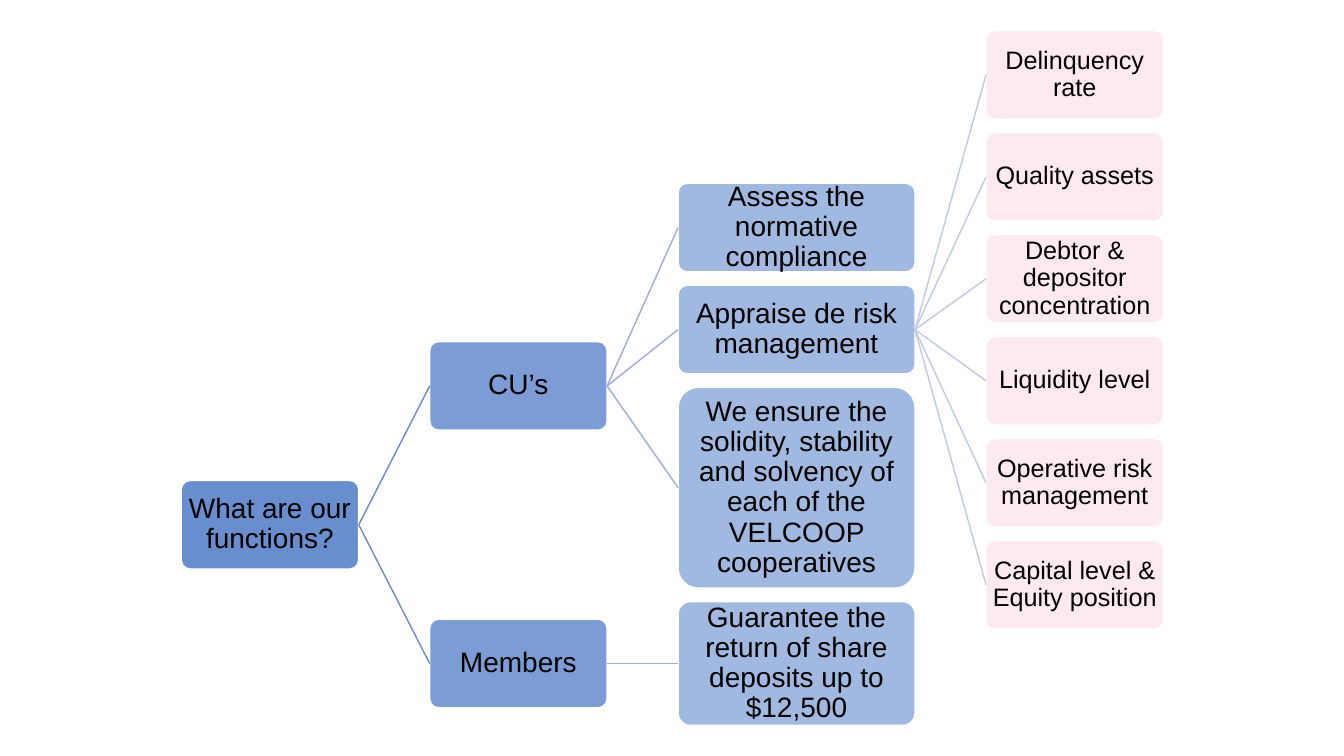
from dataclasses import dataclass, field

from lxml.etree import SubElement
from pptx import Presentation
from pptx.dml.color import RGBColor
from pptx.enum.shapes import MSO_CONNECTOR, MSO_SHAPE
from pptx.enum.text import MSO_ANCHOR, PP_ALIGN
from pptx.oxml.ns import qn
from pptx.shapes.autoshape import Shape
from pptx.shapes.shapetree import SlideShapes
from pptx.util import Cm, Pt

BLUE = RGBColor(0x44, 0x72, 0xC4)
PINK = RGBColor(0xF8, 0xBB, 0xD0)
WHITE = RGBColor(0xFF, 0xFF, 0xFF)
BLACK = RGBColor(0x00, 0x00, 0x00)
GROUP_LINK = RGBColor(0x6D, 0x89, 0xCB)
ACTION_LINK = RGBColor(0x9E, 0xAD, 0xD8)
METRIC_LINK = RGBColor(0xC1, 0xC9, 0xE4)

BOX_HEIGHT = 2.23
ROW_GAP = 0.34
COLUMN_GAP = 1.79
NARROW, WIDE = 4.47, 5.97
RIGHT_SITE, LEFT_SITE = 3, 1


@dataclass(frozen=True)
class Level:
    left: float
    width: float
    fill: RGBColor
    opacity: int
    link: RGBColor
    font_size: int = 20


@dataclass
class Node:
    text: str
    level: Level
    top: float
    height: float = BOX_HEIGHT
    children: list["Node"] = field(default_factory=list)


ROOT_LEFT = 4.57
GROUP_LEFT = ROOT_LEFT + NARROW + COLUMN_GAP
ACTION_LEFT = GROUP_LEFT + NARROW + COLUMN_GAP
METRIC_LEFT = ACTION_LEFT + WIDE + COLUMN_GAP

ROOT = Level(ROOT_LEFT, NARROW, BLUE, 80, GROUP_LINK)
GROUP = Level(GROUP_LEFT, NARROW, BLUE, 70, GROUP_LINK)
ACTION = Level(ACTION_LEFT, WIDE, BLUE, 50, ACTION_LINK)
METRIC = Level(METRIC_LEFT, NARROW, PINK, 30, METRIC_LINK, 18)


def stack(level: Level, top: float, boxes: list[tuple[str, float]]) -> list[Node]:
    """Place boxes of the given heights below each other with equal gaps."""
    nodes = []
    for text, height in boxes:
        nodes.append(Node(text, level, top, height))
        top += height + ROW_GAP
    return nodes


def build_tree() -> Node:
    metrics = stack(METRIC, 0.77, [(text, BOX_HEIGHT) for text in (
        "Delinquency rate",
        "Quality assets",
        "Debtor & depositor concentration",
        "Liquidity level",
        "Operative risk management",
        "Capital level & Equity position",
    )])
    actions = stack(ACTION, 4.62, [
        ("Assess the normative compliance", BOX_HEIGHT),
        ("Appraise de risk management", BOX_HEIGHT),
        ("We ensure the solidity, stability and solvency of each of the "
         "VELCOOP cooperatives", 5.06),
        ("Guarantee the return of share deposits up to $12,500", 3.12),
    ])
    actions[1].children = metrics
    guarantee = actions[3]
    members_top = guarantee.top + (guarantee.height - BOX_HEIGHT) / 2
    unions = Node("CU’s", GROUP, 8.61, children=actions[:3])
    members = Node("Members", GROUP, members_top, children=[guarantee])
    root_top = (unions.top + members.top) / 2
    return Node("What are our functions?", ROOT, root_top, children=[unions, members])


def draw_box(shapes: SlideShapes, node: Node) -> Shape:
    level = node.level
    box = shapes.add_shape(MSO_SHAPE.ROUNDED_RECTANGLE, Cm(level.left), Cm(node.top),
                           Cm(level.width), Cm(node.height))
    box.adjustments[0] = 0.1
    box.shadow.inherit = False
    box.fill.solid()
    box.fill.fore_color.rgb = level.fill
    color = box.fill._xPr.find(qn("a:solidFill"))[0]
    SubElement(color, qn("a:alpha"), val=str(level.opacity * 1000))
    box.line.color.rgb = WHITE
    box.line.width = Pt(1)

    frame = box.text_frame
    frame.word_wrap = True
    frame.vertical_anchor = MSO_ANCHOR.MIDDLE
    frame.margin_left = frame.margin_right = Cm(0.03)
    frame.margin_top = frame.margin_bottom = Cm(0.03)
    paragraph = frame.paragraphs[0]
    paragraph.text = node.text
    paragraph.alignment = PP_ALIGN.CENTER
    paragraph.line_spacing = 0.9
    paragraph.font.name = "Arial"
    paragraph.font.size = Pt(level.font_size)
    paragraph.font.color.rgb = BLACK
    return box


def draw_link(shapes: SlideShapes, parent: Shape, child: Shape, color: RGBColor) -> None:
    link = shapes.add_connector(MSO_CONNECTOR.STRAIGHT, 0, 0, 0, 0)
    link.begin_connect(parent, RIGHT_SITE)
    link.end_connect(child, LEFT_SITE)
    link.line.color.rgb = color
    link.line.width = Pt(1)
    SubElement(link._element.spPr, qn("a:effectLst"))


def draw_tree(shapes: SlideShapes, node: Node) -> Shape:
    """Draw a node and its descendants, and return the node's own box."""
    box = draw_box(shapes, node)
    for child in node.children:
        draw_link(shapes, box, draw_tree(shapes, child), child.level.link)
    return box


def main() -> None:
    presentation = Presentation()
    presentation.slide_width = Cm(33.87)
    presentation.slide_height = Cm(19.05)
    blank_layout = presentation.slide_layouts[6]
    slide = presentation.slides.add_slide(blank_layout)
    draw_tree(slide.shapes, build_tree())
    presentation.save("out.pptx")


if __name__ == "__main__":
    main()
